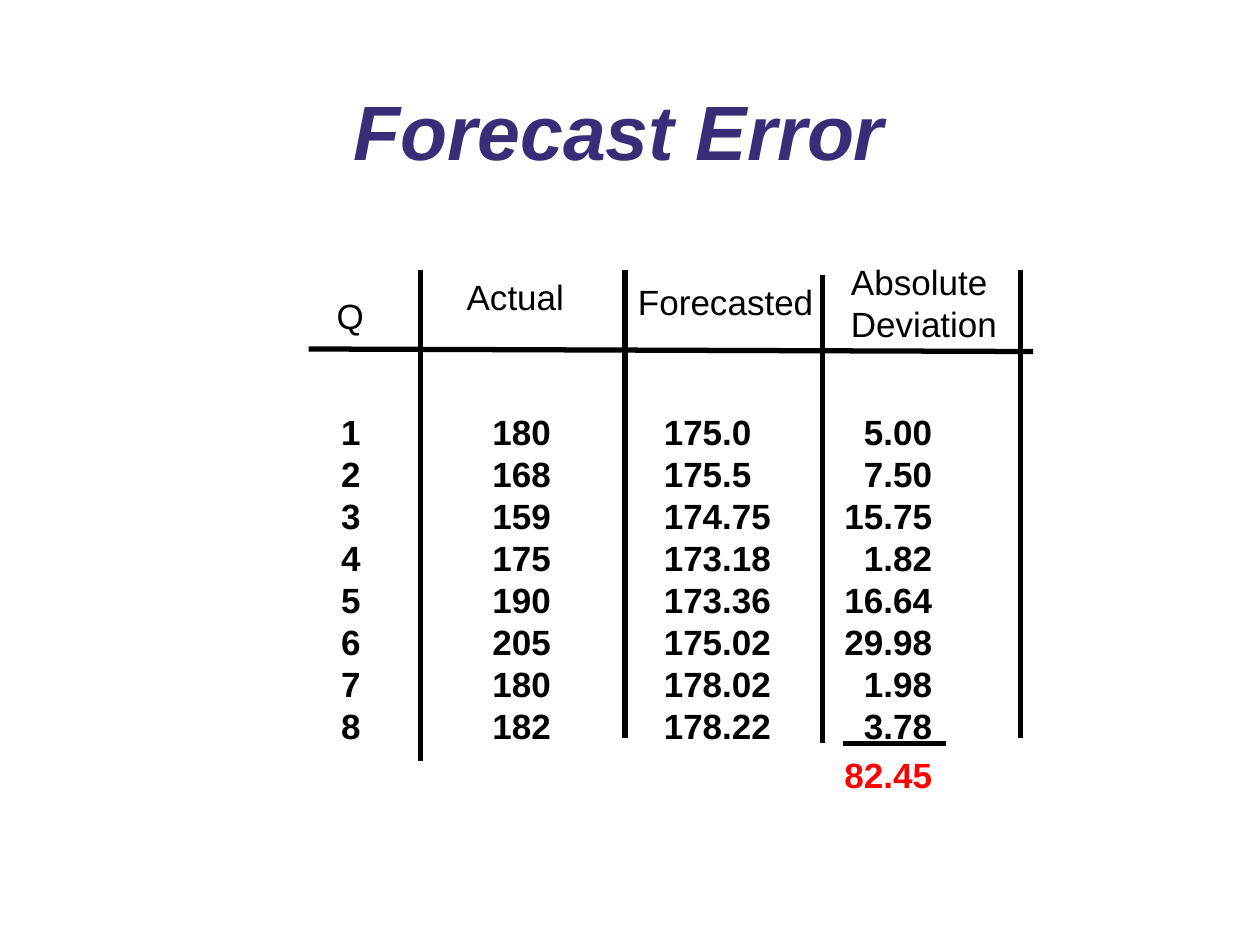
from lxml import etree
from pptx import Presentation
from pptx import util as u
from pptx.dml.color import RGBColor
from pptx.enum import shapes, text
from pptx.oxml.ns import qn

BLACK = RGBColor(0x00, 0x00, 0x00)
INDIGO = RGBColor(0x3A, 0x2C, 0x76)
RED = RGBColor(0xFF, 0x00, 0x00)

QUARTERS = [
    ("1", "180", "175.0", "5.00"),
    ("2", "168", "175.5", "7.50"),
    ("3", "159", "174.75", "15.75"),
    ("4", "175", "173.18", "1.82"),
    ("5", "190", "173.36", "16.64"),
    ("6", "205", "175.02", "29.98"),
    ("7", "180", "178.02", "1.98"),
    ("8", "182", "178.22", "3.78"),
]
TOTAL = ("", "", "", "82.45")


class Sheet:
    """Style and current slide; lengths are cells of a 100 by 75 grid."""

    font, size, rule_width = "Arial", 20, 3

    def __init__(self, deck):
        self.slide = deck.slides.add_slide(deck.slide_layouts[6])
        self.column = deck.slide_width / 100
        self.row = deck.slide_height / 75

    def x(self, columns):
        return u.Emu(round(columns * self.column))

    def y(self, rows):
        return u.Emu(round(rows * self.row))

    def words(self, left, top, width, height, lines, size=size, color=BLACK,
              bold=False, italic=False, align=text.PP_ALIGN.CENTER, wrap=False):
        box = self.slide.shapes.add_textbox(
            self.x(left), self.y(top), self.x(width), self.y(height))
        frame = box.text_frame
        frame.text = "\n".join(lines)
        frame.word_wrap = wrap
        for paragraph in frame.paragraphs:
            paragraph.alignment = align
            for run in paragraph.runs:
                font = run.font
                font.name, font.size = self.font, u.Pt(size)
                font.bold, font.italic = bold, italic
                font.color.rgb = color
        return frame

    def tabs(self, paragraph, stops):
        tab_list = etree.SubElement(paragraph._p.get_or_add_pPr(), qn("a:tabLst"))
        for position, side in stops:
            etree.SubElement(tab_list, qn("a:tab"), pos=str(self.x(position)), algn=side)

    def rule(self, x1, y1, x2, y2):
        line = self.slide.shapes.add_connector(
            shapes.MSO_CONNECTOR.STRAIGHT,
            self.x(x1), self.y(y1), self.x(x2), self.y(y2))
        line.line.color.rgb = BLACK
        line.line.width = u.Pt(self.rule_width)
        etree.SubElement(line._element.spPr, qn("a:effectLst"))


def main():
    deck = Presentation()
    deck.slide_width, deck.slide_height = u.Inches(10), u.Inches(7.5)
    sheet = Sheet(deck)

    # Title
    title = sheet.words(7.5, 3.6, 85, 14.4, ["Forecast Error "], size=44,
                        color=INDIGO, bold=True, italic=True, wrap=True)
    title.vertical_anchor = text.MSO_ANCHOR.MIDDLE
    title.paragraphs[0].line_spacing = 0.9

    # Quarterly figures, aligned by tab stops, with the total below
    rows = ["\t".join(row) for row in QUARTERS + [TOTAL]]
    figures = sheet.words(26.1, 32.1, 86.5, 35.3, rows, bold=True,
                          align=text.PP_ALIGN.LEFT, wrap=True)
    total = figures.paragraphs[-1]
    total.space_before = u.Pt(4)
    total.runs[0].font.color.rgb = RED
    for quarter in figures.paragraphs:
        sheet.tabs(quarter, [(12, "l"), (25.6, "l"), (46.9, "r")])

    # Header rule and sum rule
    sheet.rule(24.5, 27.7, 82, 27.9)
    sheet.rule(66.9, 59, 75.1, 59)

    # Column rules
    for x, top, bottom in [(49.6, 21.4, 58.6), (81, 21.4, 58.6),
                           (33.4, 21.4, 60.4), (65.3, 21.8, 59)]:
        sheet.rule(x, top, x, bottom)

    # Column headings
    for left, top, width, height, heading in [
            (25.7, 22.9, 4.2, 4.4, ["Q"]),
            (36, 21.4, 9.8, 4.4, ["Actual"]),
            (49.6, 21.8, 16, 4.4, ["Forecasted"]),
            (65.7, 20.2, 14.5, 7.7, ["Absolute", " Deviation"])]:
        sheet.words(left, top, width, height, heading)

    deck.save("out.pptx")


if __name__ == "__main__":
    main()
